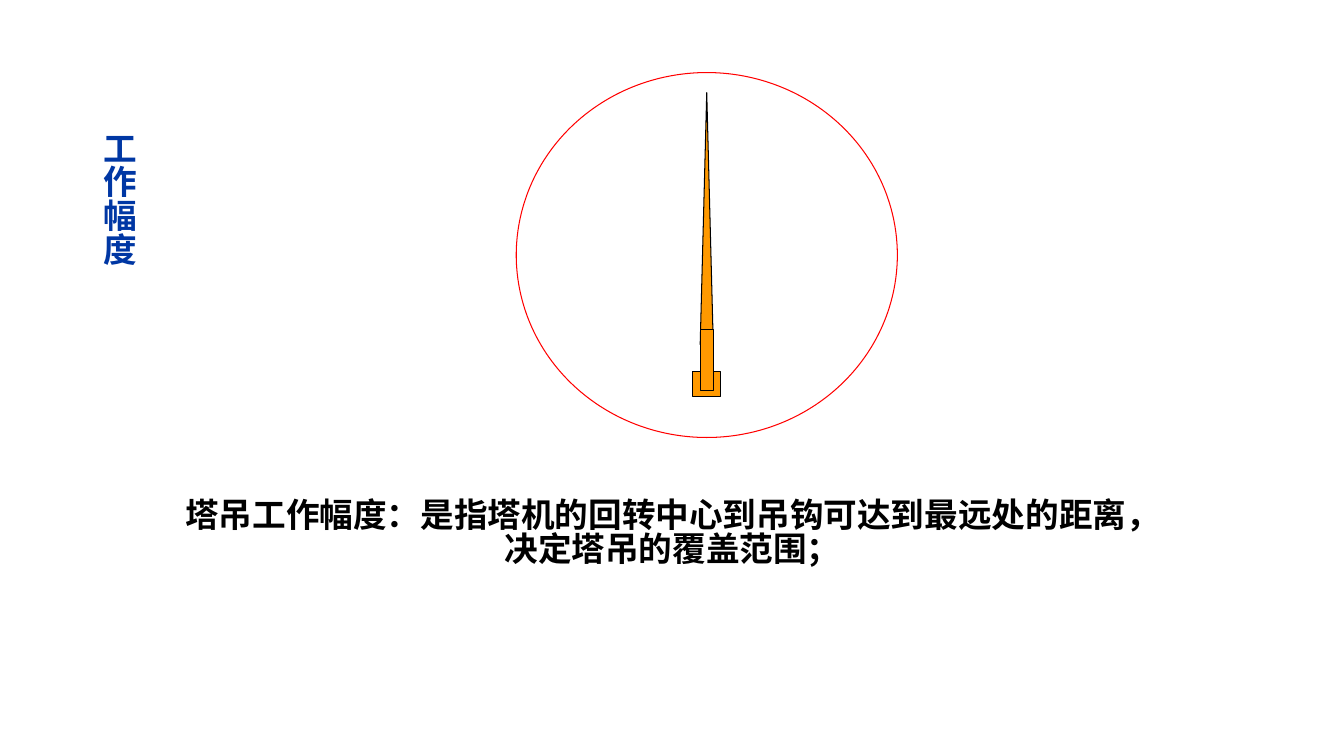
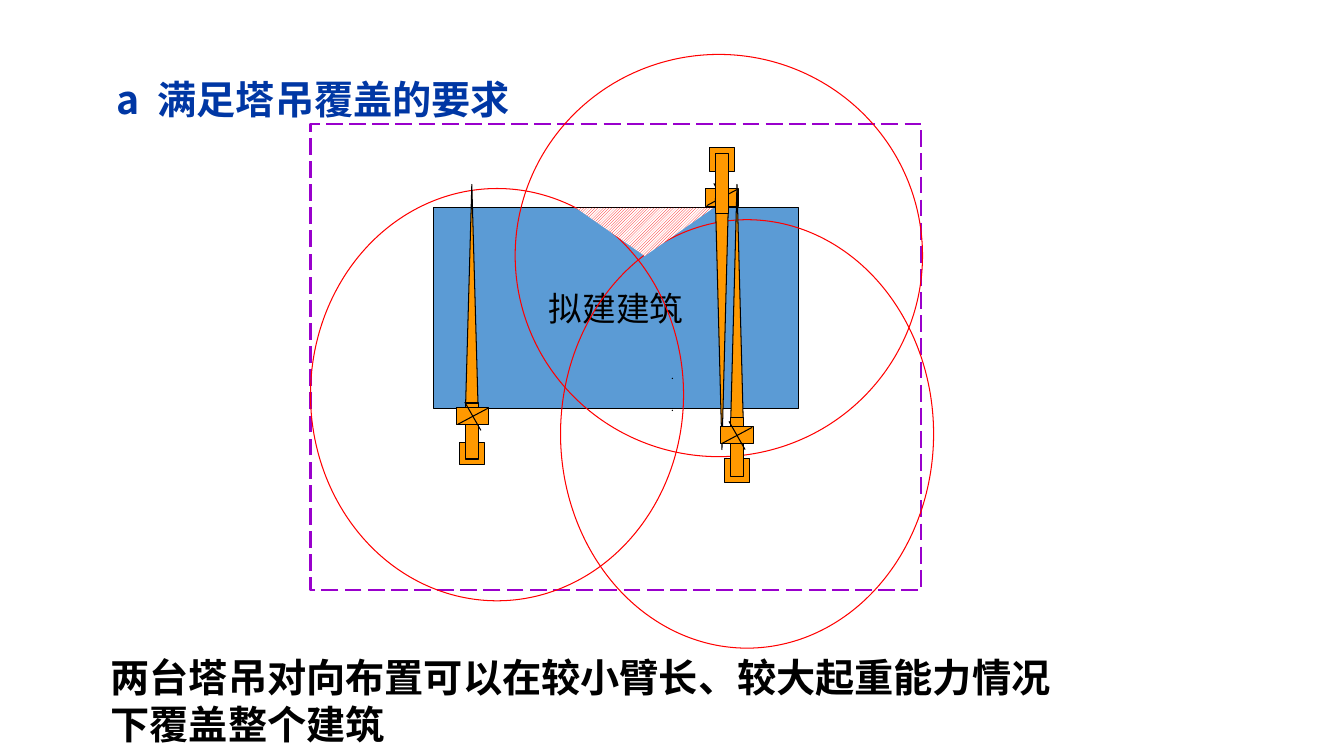
from dataclasses import dataclass

from lxml.etree import SubElement
from pptx import Presentation
from pptx.dml.color import RGBColor
from pptx.enum.dml import MSO_LINE, MSO_PATTERN
from pptx.enum.shapes import MSO_CONNECTOR, MSO_SHAPE
from pptx.enum.text import MSO_ANCHOR, PP_ALIGN
from pptx.oxml.ns import qn
from pptx.util import Inches, Pt


@dataclass(frozen=True)
class Theme:
    title: str = "0037A4"
    text: str = "000000"
    white: str = "FFFFFF"
    crane: str = "FF9900"
    reach: str = "FF0000"
    building: str = "5B9BD5"
    site: str = "9900CC"
    font: str = "Calibri"
    cjk_font: str = "Noto Sans CJK SC"
    tiny: int = 8
    body: int = 24
    heading: int = 28
    thin: float = 0.75
    medium: float = 1.5


THEME = Theme()


def rgb(value):
    return RGBColor.from_string(value)


def write(frame, text, label="", size=THEME.body, color=THEME.text, bold=False,
          font=THEME.font, align=PP_ALIGN.LEFT, spacing=None, first_indent=None):
    """Fill a text frame with one paragraph; a label before the text is letter-spaced."""
    para = frame.paragraphs[0]
    para.alignment = align
    if spacing:
        para.line_spacing = spacing
    if first_indent:
        properties = para._p.get_or_add_pPr()
        properties.set("marL", "0")
        properties.set("indent", str(Inches(first_indent)))
    for words, tracking in ((label, 315), (text, 0)):
        if not words:
            continue
        span = para.add_run()
        span.text = words
        span.font.name = font
        span.font.size = Pt(size)
        span.font.bold = bold
        span.font.color.rgb = rgb(color)
        properties = span._r.get_or_add_rPr()
        SubElement(properties, qn("a:ea"), typeface=THEME.cjk_font)
        if tracking:
            properties.set("spc", str(tracking))


def add_text(page, place, text, anchor=MSO_ANCHOR.TOP, vertical=False, **text_format):
    box = page.shapes.add_textbox(*map(Inches, place))
    frame = box.text_frame
    frame.word_wrap = True
    frame.vertical_anchor = anchor
    if vertical:
        frame._txBody.bodyPr.set("vert", "eaVert")
    write(frame, text, **text_format)


def add_shape(page, kind, place, fill=None, line=THEME.text, width=THEME.thin, rotation=0):
    shape = page.shapes.add_shape(kind, *map(Inches, place))
    shape.shadow.inherit = False
    shape.rotation = rotation
    if fill:
        shape.fill.solid()
        shape.fill.fore_color.rgb = rgb(fill)
    else:
        shape.fill.background()
    if line:
        shape.line.color.rgb = rgb(line)
        shape.line.width = Pt(width)
    else:
        shape.line.fill.background()
    return shape


def add_line(page, start, end):
    line = page.shapes.add_connector(MSO_CONNECTOR.STRAIGHT, *map(Inches, start + end))
    line.line.color.rgb = rgb(THEME.text)
    line.line.width = Pt(THEME.thin)
    SubElement(line._element.spPr, qn("a:effectLst"))


def add_reach(page, *place):
    add_shape(page, MSO_SHAPE.OVAL, place, line=THEME.reach)


def add_crane(page, center, tip, tail, mast=0.13, weight=0.25):
    """Draw a crane along a vertical axis, from its jib tip to its counterweight tail."""
    parts = (
        (MSO_SHAPE.RECTANGLE, weight, 0.92, 1),
        (MSO_SHAPE.FLOWCHART_EXTRACT, mast, 0, 0.83),
        (MSO_SHAPE.RECTANGLE, mast, 0.78, 0.98),
    )
    for kind, width, start, end in parts:
        top, bottom = sorted(tip + (tail - tip) * share for share in (start, end))
        add_shape(page, kind, (center - width / 2, top, width, bottom - top),
                  fill=THEME.crane, rotation=180 if tail < tip else 0)


def add_base(page, x, y, width=0.32, height=0.17):
    """Draw a crane base centred on x, y with its two crossing lines."""
    add_shape(page, MSO_SHAPE.RECTANGLE, (x - width / 2, y - height / 2, width, height),
              fill=THEME.crane)
    for across, down in ((0.15, -0.08), (0.08, 0.14)):
        add_line(page, (x - across, y - down), (x + across, y + down))


def add_uncovered_area(page, *place):
    area = add_shape(page, MSO_SHAPE.ISOSCELES_TRIANGLE, place, line=None)
    area._element.spPr.xfrm.set("flipV", "1")
    area.fill.patterned()
    area.fill.pattern = MSO_PATTERN.DARK_UPWARD_DIAGONAL
    area.fill.fore_color.rgb = rgb(THEME.reach)
    area.fill.back_color.rgb = rgb(THEME.white)


def build_working_radius(page):
    add_text(page, (1.67, 4.91, 10, 0.84),
             "塔吊工作幅度：是指塔机的回转中心到吊钩可达到最远处的距离，决定塔吊的覆盖范围；",
             bold=True, align=PP_ALIGN.CENTER, spacing=0.85)
    add_reach(page, 5.12, 0.72, 3.78, 3.62)
    add_crane(page, 7.01, tip=0.92, tail=3.93, weight=0.28)
    add_text(page, (0.83, 1.21, 0.6, 1.54), "工作幅度", vertical=True,
             color=THEME.title, bold=True, align=PP_ALIGN.CENTER)


def build_coverage(page):
    add_base(page, 7.16, 1.96)
    building = add_shape(page, MSO_SHAPE.RECTANGLE, (4.3, 2.06, 3.62, 1.99),
                         fill=THEME.building)
    building.text_frame.word_wrap = False
    building.text_frame.vertical_anchor = MSO_ANCHOR.MIDDLE
    write(building.text_frame, "拟建建筑", align=PP_ALIGN.CENTER)
    for top in (3.6, 3.92):
        add_text(page, (1.67, top, 10, 0.25), ".", size=THEME.tiny, align=PP_ALIGN.CENTER)

    site = add_shape(page, MSO_SHAPE.RECTANGLE, (3.08, 1.23, 6.06, 4.62),
                     line=THEME.site, width=THEME.medium)
    site.line.dash_style = MSO_LINE.LONG_DASH
    add_reach(page, 5.11, 0.54, 4.04, 3.99)
    add_reach(page, 3.08, 1.87, 3.7, 4.09)
    add_reach(page, 5.56, 2.18, 3.7, 4.25)
    add_uncovered_area(page, 5.71, 2.06, 1.37, 0.48)

    add_crane(page, 7.16, tip=4.46, tail=1.46)
    add_crane(page, 7.31, tip=1.83, tail=4.79)
    add_crane(page, 4.68, tip=1.83, tail=4.61)
    add_base(page, 4.69, 4.13)
    add_base(page, 7.31, 4.32)

    add_text(page, (0.67, 0.7, 5.91, 0.57), "满足塔吊覆盖的要求", label="a ",
             anchor=MSO_ANCHOR.MIDDLE, size=THEME.heading, color=THEME.title, bold=True,
             font=THEME.cjk_font, first_indent=0.39)
    add_text(page, (1, 6.43, 9.74, 1.04),
             "两台塔吊对向布置可以在较小臂长、较大起重能力情况下覆盖整个建筑",
             size=THEME.heading, bold=True)


def main():
    deck = Presentation()
    deck.slide_width, deck.slide_height = Inches(13.33), Inches(7.5)
    for build in (build_working_radius, build_coverage):
        build(deck.slides.add_slide(deck.slide_layouts[6]))
    deck.save("out.pptx")


if __name__ == "__main__":
    main()
